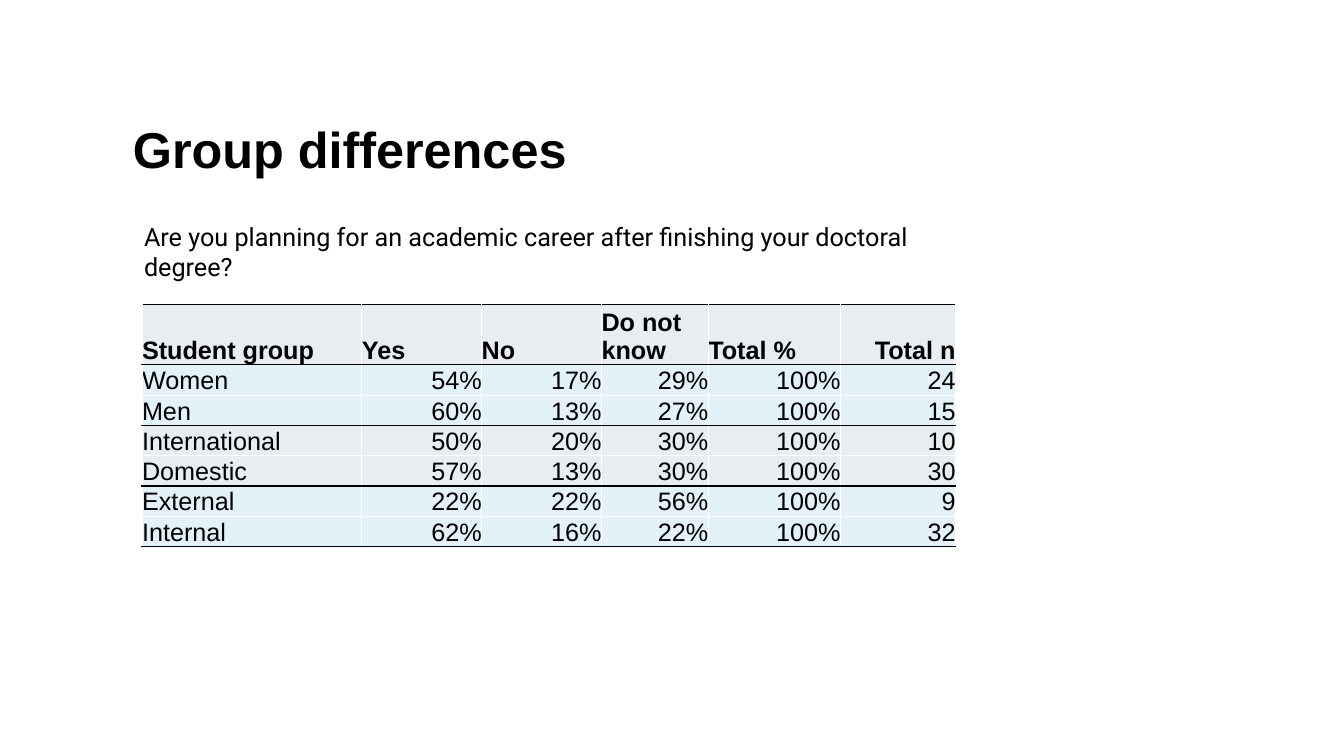
"""Build the slide on group differences in academic career plans."""
import lxml.etree
import pptx
import pptx.dml.color
import pptx.enum.text
import pptx.oxml.ns
import pptx.util

Cm = pptx.util.Cm
Pt = pptx.util.Pt
RGBColor = pptx.dml.color.RGBColor
ALIGN = pptx.enum.text.PP_ALIGN
ANCHOR = pptx.enum.text.MSO_ANCHOR

BLACK = RGBColor(0x00, 0x00, 0x00)
WHITE = RGBColor(0xFF, 0xFF, 0xFF)
GREY = RGBColor(0xE7, 0xED, 0xF0)
BLUE = RGBColor(0xE3, 0xF1, 0xF8)

COLUMN_WIDTHS = [5.54, 3.02, 3.02, 2.69, 3.33, 2.9]
ANSWERS = [
    ["Student group", "Yes", "No", "Do not know", "Total %", "Total n"],
    ["Women", "54%", "17%", "29%", "100%", "24"],
    ["Men", "60%", "13%", "27%", "100%", "15"],
    ["International", "50%", "20%", "30%", "100%", "10"],
    ["Domestic", "57%", "13%", "30%", "100%", "30"],
    ["External", "22%", "22%", "56%", "100%", "9"],
    ["Internal", "62%", "16%", "22%", "100%", "32"],
]


def write(frame, text, font_name, size, bold=False):
    frame.text = text
    frame.word_wrap = True
    font = frame.paragraphs[0].runs[0].font
    font.name = font_name
    font.size = Pt(size)
    font.bold = bold
    font.color.rgb = BLACK


def add_border(cell, side, color):
    qn = pptx.oxml.ns.qn
    properties = cell._tc.get_or_add_tcPr()
    line = lxml.etree.SubElement(properties, qn(f"a:ln{side}"), w=str(Pt(1)))
    fill = lxml.etree.SubElement(line, qn("a:solidFill"))
    lxml.etree.SubElement(fill, qn("a:srgbClr"), val=str(color))


presentation = pptx.Presentation()
presentation.slide_width = Cm(33.87)
presentation.slide_height = Cm(19.05)
slide = presentation.slides.add_slide(presentation.slide_layouts[6])

title = slide.shapes.add_textbox(Cm(3.1), Cm(0.2), Cm(26.31), Cm(4.45)).text_frame
write(title, "Group differences", "Arial", 36, bold=True)
title.vertical_anchor = ANCHOR.BOTTOM
title.paragraphs[0].line_spacing = 0.9

answer_table = slide.shapes.add_table(
    len(ANSWERS), len(COLUMN_WIDTHS), Cm(3.58), Cm(7.67), Cm(20.5), Cm(3.57)
).table
answer_table.first_row = False
answer_table.horz_banding = False
for column, width in zip(answer_table.columns, COLUMN_WIDTHS):
    column.width = Cm(width)

for row, answers in enumerate(ANSWERS):
    answer_table.rows[row].height = Cm(0.51)
    ends_group = row % 2 == 0
    for column, answer in enumerate(answers):
        cell = answer_table.cell(row, column)
        write(cell.text_frame, answer, "Arial", 18, bold=row == 0)
        cell.vertical_anchor = ANCHOR.BOTTOM
        cell.margin_left = cell.margin_right = cell.margin_top = cell.margin_bottom = 0
        if column == len(answers) - 1 or (row > 0 and column > 0):
            cell.text_frame.paragraphs[0].alignment = ALIGN.RIGHT
        add_border(cell, "L", WHITE)
        add_border(cell, "R", WHITE)
        add_border(cell, "T", WHITE if ends_group and row > 0 else BLACK)
        add_border(cell, "B", BLACK if ends_group else WHITE)
        cell.fill.solid()
        cell.fill.fore_color.rgb = BLUE if (row + 1) // 2 % 2 else GREY

question = slide.shapes.add_textbox(Cm(3.38), Cm(5.44), Cm(20.04), Cm(1.8)).text_frame
write(
    question,
    "Are you planning for an academic career after finishing your doctoral degree?",
    "Roboto",
    18,
)

presentation.save("out.pptx")
